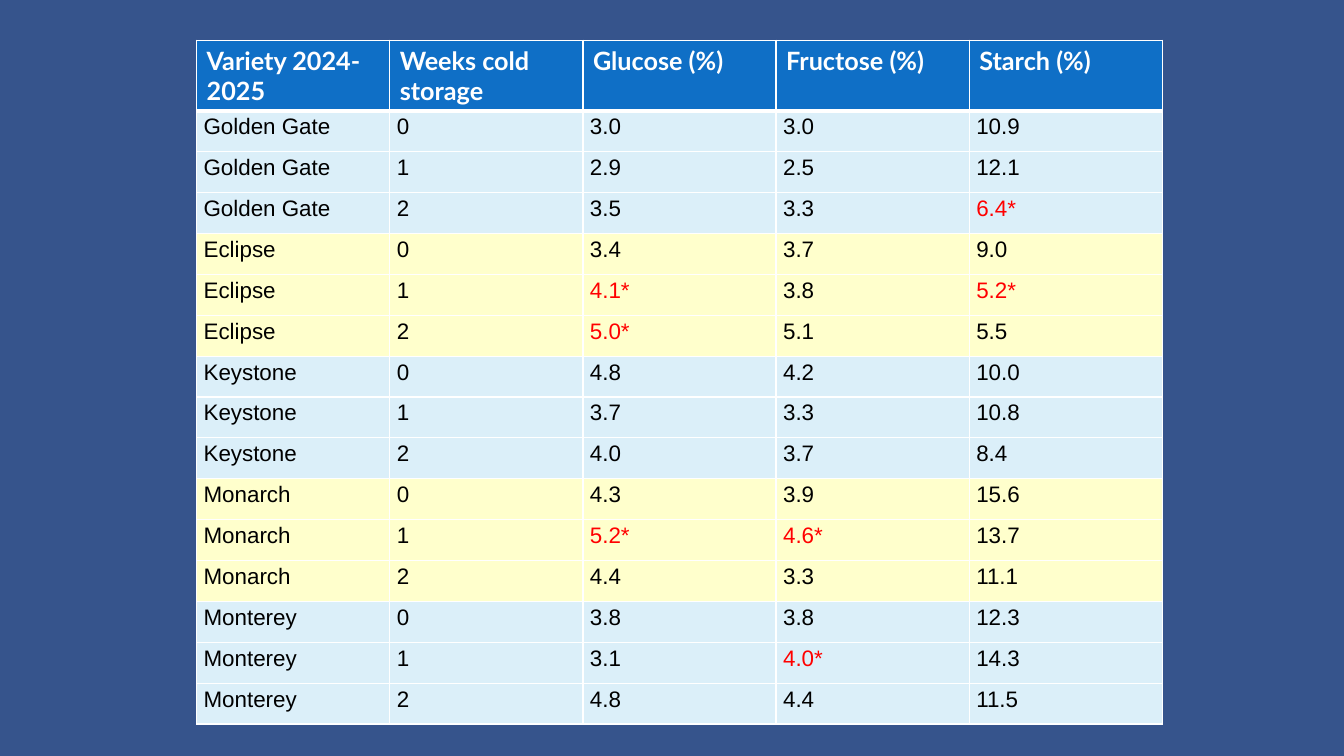
from dataclasses import dataclass

from lxml import etree
from pptx import Presentation
from pptx import util as u
from pptx.dml import color
from pptx.oxml import ns


@dataclass(frozen=True)
class Theme:
    background: str = "36548C"
    header_fill: str = "0F6FC6"
    band_fills: tuple[str, str] = ("DBEFF9", "FFFFCC")
    border: str = "FFFFFF"
    header_text: str = "FFFFFF"
    body_text: str = "000000"
    significant_text: str = "FF0000"
    header_font: str = "Lato"
    body_font: str = "Arial"
    header_size: int = 18
    body_size: int = 16
    thin: int = 1
    thick: int = 3


@dataclass(frozen=True)
class Layout:
    """Table measures in percent of the slide's width or height."""
    left: float = 14.63
    top: float = 5.33
    width: float = 71.87
    header_height: float = 9.2
    row_height: float = 5.41


@dataclass(frozen=True)
class Variety:
    name: str
    weeks: tuple[tuple[str, str, str], ...]


@dataclass(frozen=True)
class CellStyle:
    fill: str
    text: str
    font: str
    size: int
    bold: bool
    top_line: int
    bottom_line: int


THEME = Theme()
LAYOUT = Layout()
HEADINGS = ("Variety 2024- 2025", "Weeks cold storage", "Glucose (%)",
            "Fructose (%)", "Starch (%)")
VARIETIES = (
    Variety("Golden Gate", (("3.0", "3.0", "10.9"), ("2.9", "2.5", "12.1"),
                            ("3.5", "3.3", "6.4*"))),
    Variety("Eclipse", (("3.4", "3.7", "9.0"), ("4.1*", "3.8", "5.2*"),
                        ("5.0*", "5.1", "5.5"))),
    Variety("Keystone", (("4.8", "4.2", "10.0"), ("3.7", "3.3", "10.8"),
                         ("4.0", "3.7", "8.4"))),
    Variety("Monarch", (("4.3", "3.9", "15.6"), ("5.2*", "4.6*", "13.7"),
                        ("4.4", "3.3", "11.1"))),
    Variety("Monterey", (("3.8", "3.8", "12.3"), ("3.1", "4.0*", "14.3"),
                         ("4.8", "4.4", "11.5"))),
)


def rgb(code: str) -> color.RGBColor:
    return color.RGBColor.from_string(code)


def share(percent: float, length: int) -> u.Emu:
    return u.Emu(round(length * percent / 100))


def add_borders(cell, style: CellStyle) -> None:
    properties = cell._tc.get_or_add_tcPr()
    widths = {"lnL": THEME.thin, "lnR": THEME.thin,
              "lnT": style.top_line, "lnB": style.bottom_line}
    for side, points in widths.items():
        line = etree.SubElement(properties, ns.qn(f"a:{side}"), w=str(u.Pt(points)))
        fill = etree.SubElement(line, ns.qn("a:solidFill"))
        etree.SubElement(fill, ns.qn("a:srgbClr"), val=THEME.border)


def write_cell(cell, words: str, style: CellStyle):
    """Style the cell, add its text and return the paragraph."""
    add_borders(cell, style)
    cell.fill.solid()
    cell.fill.fore_color.rgb = rgb(style.fill)
    para = cell.text_frame.paragraphs[0]
    span = para.add_run()
    span.text = words
    span.font.name = style.font
    span.font.size = u.Pt(style.size)
    span.font.bold = style.bold
    span.font.color.rgb = rgb(style.text)
    return para


def write_header(table) -> None:
    style = CellStyle(THEME.header_fill, THEME.header_text, THEME.header_font,
                      THEME.header_size, True, THEME.thin, THEME.thick)
    for column, heading in enumerate(HEADINGS):
        write_cell(table.cell(0, column), heading, style)


def write_body_row(table, row: int, entries: tuple[str, ...], fill: str) -> None:
    for column, entry in enumerate(entries):
        ink = THEME.significant_text if entry.endswith("*") else THEME.body_text
        top_line = THEME.thick if row == 1 else THEME.thin
        style = CellStyle(fill, ink, THEME.body_font, THEME.body_size, False,
                          top_line, THEME.thin)
        cell = table.cell(row, column)
        cell.margin_left = cell.margin_right = u.Inches(0.07)
        cell.margin_top = cell.margin_bottom = 0
        write_cell(cell, entry, style).line_spacing = 1.15


def add_sugar_table(page, slide_width: int, slide_height: int) -> None:
    body_rows = sum(len(variety.weeks) for variety in VARIETIES)
    height = LAYOUT.header_height + body_rows * LAYOUT.row_height
    table = page.shapes.add_table(
        body_rows + 1, len(HEADINGS),
        share(LAYOUT.left, slide_width), share(LAYOUT.top, slide_height),
        share(LAYOUT.width, slide_width), share(height, slide_height)).table
    table.horz_banding = False
    for row in table.rows:
        row.height = share(LAYOUT.row_height, slide_height)
    table.rows[0].height = share(LAYOUT.header_height, slide_height)

    write_header(table)
    row = 1
    for band, variety in enumerate(VARIETIES):
        for week, values in enumerate(variety.weeks):
            write_body_row(table, row, (variety.name, str(week), *values),
                           THEME.band_fills[band % 2])
            row += 1


def main() -> None:
    deck = Presentation()
    deck.slide_width, deck.slide_height = u.Inches(13.33), u.Inches(7.5)
    page = deck.slides.add_slide(deck.slide_layouts[6])
    page.background.fill.solid()
    page.background.fill.fore_color.rgb = rgb(THEME.background)
    add_sugar_table(page, deck.slide_width, deck.slide_height)
    deck.save("out.pptx")


if __name__ == "__main__":
    main()
